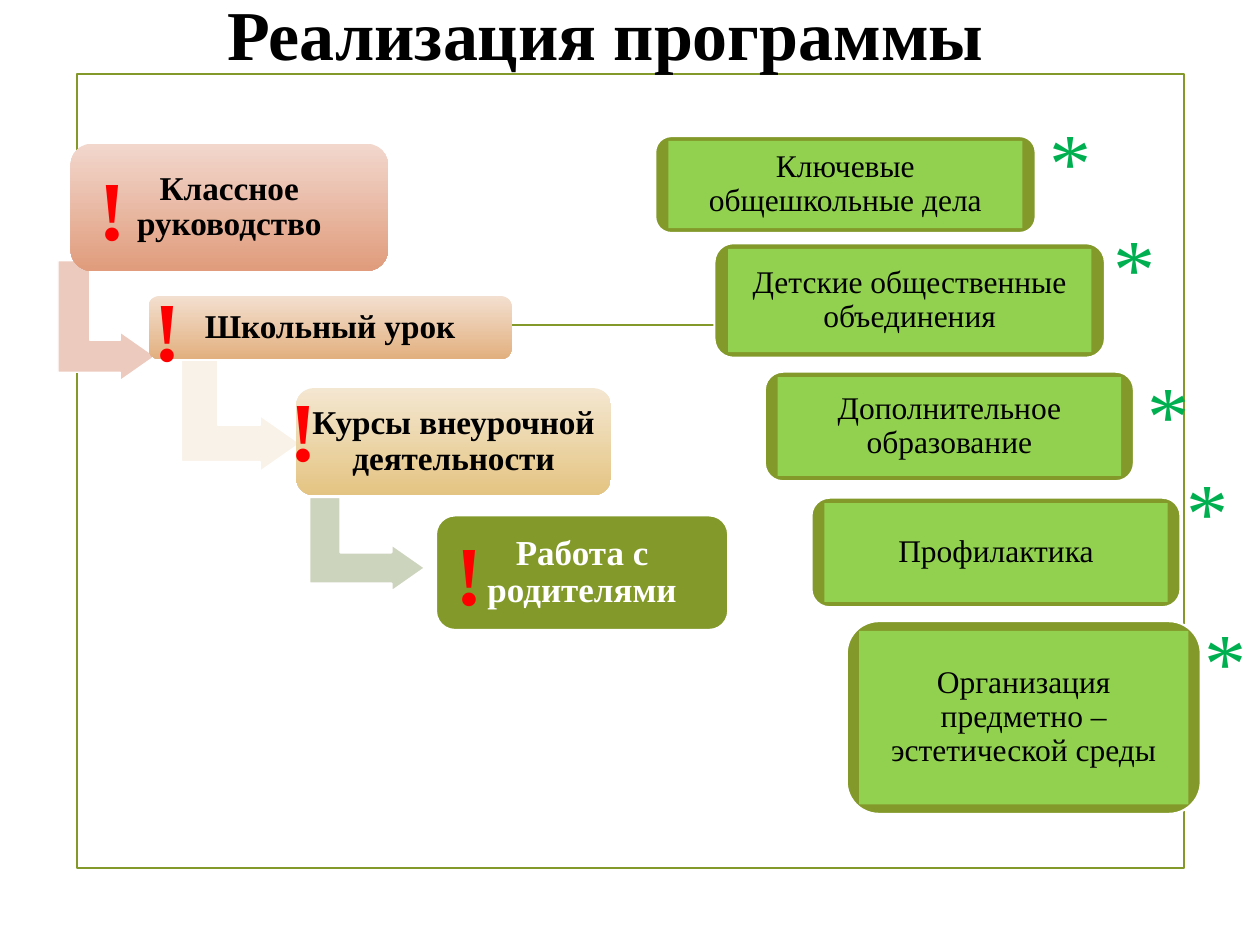
from lxml.etree import SubElement
from pptx import Presentation
from pptx.dml.color import RGBColor
from pptx.enum.shapes import MSO_CONNECTOR, MSO_SHAPE
from pptx.enum.text import MSO_ANCHOR, PP_ALIGN
from pptx.oxml.ns import qn
from pptx.util import Inches, Pt

FONT = "Times New Roman"
BLACK = RGBColor(0x00, 0x00, 0x00)
WHITE = RGBColor(0xFF, 0xFF, 0xFF)
OLIVE = RGBColor(0x83, 0x99, 0x2A)
LIME = RGBColor(0x92, 0xD0, 0x50)
RED = RGBColor(0xFF, 0x00, 0x00)
GREEN = RGBColor(0x00, 0xB0, 0x50)
ROSE = (RGBColor(0xF2, 0xD7, 0xCD), RGBColor(0xE0, 0x9C, 0x7C))
ORANGE = (RGBColor(0xF3, 0xDF, 0xCF), RGBColor(0xE2, 0xB0, 0x7F))
GOLD = (RGBColor(0xF4, 0xE7, 0xD1), RGBColor(0xE4, 0xC4, 0x82))
ARROW_ROSE = RGBColor(0xED, 0xCA, 0xBE)
ARROW_CREAM = RGBColor(0xF9, 0xF2, 0xE9)
ARROW_SAGE = RGBColor(0xCD, 0xD4, 0xBE)

# text, card box, fill, size, mark offset, arrow (offset and size, colour, line width)
STEPS = [
    ("Классное руководство", (0.56, 1.14, 2.52, 1.01), ROSE, 19, (0.12, 0.05),
     ((-0.19, 1.02, 0.95, 0.77), ARROW_ROSE, 0.75)),
    ("Школьный урок", (1.18, 2.35, 2.88, 0.5), ORANGE, 19, (-0.06, -0.2),
     ((0.29, 0.48, 0.88, 0.94), ARROW_CREAM, 0.75)),
    ("Курсы внеурочной деятельности", (2.35, 3.08, 2.5, 0.85), GOLD, 19, (-0.15, -0.13),
     ((0.19, 0.78, 0.75, 0.92), ARROW_SAGE, 1.25)),
    ("Работа с родителями", (3.46, 4.09, 2.32, 0.91), OLIVE, 20, (0.06, 0), None),
]
# text, card box, star offset
ACTIVITIES = [
    ("Ключевые общешкольные дела", (5.2, 1.08, 3.02, 0.77), (3.03, -0.27)),
    ("Детские общественные объединения", (5.67, 1.93, 3.1, 0.91), (3.07, -0.28)),
    ("Дополнительное образование", (6.07, 2.95, 2.93, 0.87), (2.94, -0.13)),
    ("Профилактика", (6.44, 3.95, 2.93, 0.87), (2.88, -0.36)),
    ("Организация предметно – эстетической среды", (6.72, 4.93, 2.81, 1.53), (2.74, -0.15)),
]


def inches(box):
    """Convert a box of numbers to lengths."""
    return [Inches(value) for value in box]


def write(holder, text, size, color, bold=False, align=PP_ALIGN.LEFT):
    """Put one formatted paragraph into a shape and return its paragraph."""
    frame = holder.text_frame
    frame.word_wrap = True
    frame.text = text
    paragraph = frame.paragraphs[0]
    paragraph.alignment = align
    font = paragraph.runs[0].font
    font.name, font.size, font.bold = FONT, Pt(size), bold
    font.color.rgb = color
    return paragraph


def write_card(card, text, size, color, bold):
    """Centre a label in a card with tight margins."""
    paragraph = write(card, text, size, color, bold, PP_ALIGN.CENTER)
    paragraph.line_spacing = 0.9
    frame = card.text_frame
    frame.vertical_anchor = MSO_ANCHOR.MIDDLE
    frame.margin_left = frame.margin_right = Inches(0.08)
    frame.margin_top = frame.margin_bottom = Inches(0.08)


def add_block(slide, preset, box, fill=None, line=None, width=1.25):
    """Add a flat shape with a solid, two-colour or empty fill."""
    block = slide.shapes.add_shape(preset, *inches(box))
    block.shadow.inherit = False
    if fill is None:
        block.fill.background()
    elif isinstance(fill, RGBColor):
        block.fill.solid()
        block.fill.fore_color.rgb = fill
    else:
        block.fill.gradient()
        block.fill.gradient_angle = 270
        for stop, color, position in zip(block.fill.gradient_stops, fill, (0, 1)):
            stop.color.rgb = color
            stop.position = position
    if line is None:
        block.line.fill.background()
    else:
        block.line.color.rgb = line
        block.line.width = Pt(width)
    return block


def add_symbol(slide, box, symbol, color, bold):
    """Add a large one-character sign."""
    write(slide.shapes.add_textbox(*inches(box)), symbol, 48, color, bold)


def add_frame(slide, box):
    """Draw the outline of the slide and its horizontal rule."""
    left, top, width, height = box
    add_block(slide, MSO_SHAPE.RECTANGLE, box, line=OLIVE)
    rule_top = Inches(top + 1.99)
    rule = slide.shapes.add_connector(
        MSO_CONNECTOR.STRAIGHT, Inches(left + 0.79), rule_top,
        Inches(left + width - 0.79), rule_top)
    rule.line.color.rgb = OLIVE
    rule.line.width = Pt(1.25)
    SubElement(rule._element.spPr, qn("a:effectLst"))


def add_title(slide, box):
    """Add the heading."""
    title = slide.shapes.add_textbox(*inches(box))
    write(title, "Реализация программы", 40, BLACK, True, PP_ALIGN.CENTER)
    title.text_frame.vertical_anchor = MSO_ANCHOR.MIDDLE


def add_step(slide, box, text, fill, size, mark, arrow):
    """Add a step of the staircase with its arrow and exclamation mark."""
    left, top = box[:2]
    if arrow:
        (dx, dy, width, height), color, line_width = arrow
        bend = add_block(slide, MSO_SHAPE.BENT_UP_ARROW, (left + dx, top + dy, width, height),
                         color, WHITE, line_width)
        bend.rotation = 90
        for index, value in enumerate((0.328, 0.25, 0.358)):
            bend.adjustments[index] = value
    solid = isinstance(fill, RGBColor)
    card = add_block(slide, MSO_SHAPE.ROUNDED_RECTANGLE, box, fill, WHITE if solid else None)
    write_card(card, text, size, WHITE if solid else BLACK, True)
    add_symbol(slide, (left + mark[0], top + mark[1], 0.44, 0.91), "!", RED, True)


def add_activity(slide, box, text, star):
    """Add a green activity card with its star."""
    left, top, width, height = box
    add_block(slide, MSO_SHAPE.ROUNDED_RECTANGLE, box, OLIVE, WHITE)
    panel = (left + 0.035 * width, top + 0.05 * height, 0.93 * width, 0.9 * height)
    write_card(add_block(slide, MSO_SHAPE.RECTANGLE, panel, LIME), text, 18, BLACK, False)
    add_symbol(slide, (left + star[0], top + star[1], 0.54, 0.91), "*", GREEN, False)


def main():
    """Build and save the slide."""
    deck = Presentation()
    deck.slide_width, deck.slide_height = Inches(10), Inches(7.5)
    slide = deck.slides.add_slide(deck.slide_layouts[6])
    add_frame(slide, (0.61, 0.59, 8.79, 6.3))
    add_title(slide, (0.68, -0.18, 8.25, 0.87))
    for text, box, fill, size, mark, arrow in STEPS:
        add_step(slide, box, text, fill, size, mark, arrow)
    for text, box, star in ACTIVITIES:
        add_activity(slide, box, text, star)
    deck.save("out.pptx")


if __name__ == "__main__":
    main()
